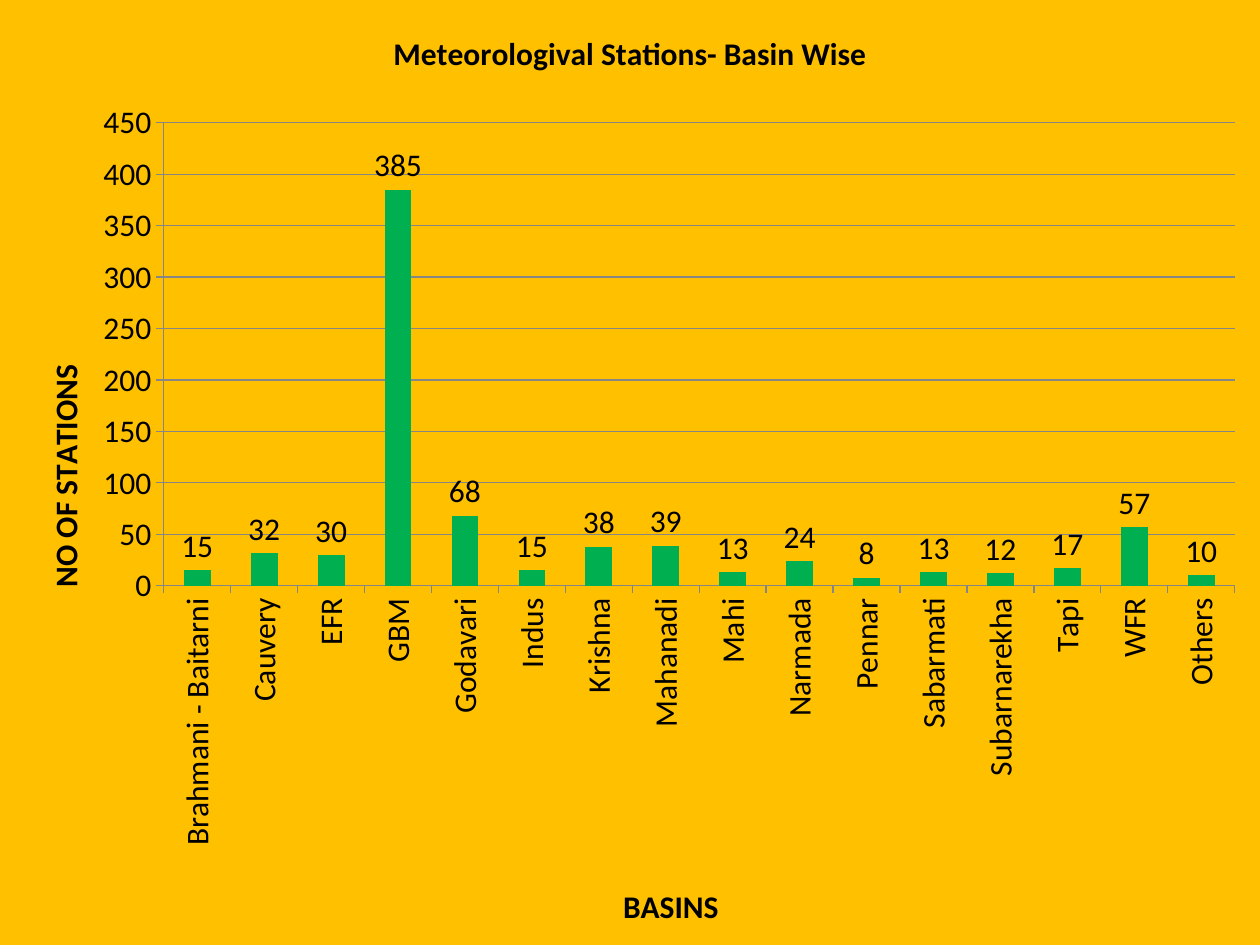
from pptx import Presentation
from pptx.chart.data import CategoryChartData
from pptx.dml.color import RGBColor
from pptx.enum.chart import XL_CHART_TYPE as ChartType, XL_LABEL_POSITION as LabelPosition
from pptx.enum.chart import XL_TICK_MARK as TickMark
from pptx.oxml import parse_xml
from pptx.oxml.ns import nsdecls, qn
from pptx.util import Pt

AMBER = RGBColor(0xFF, 0xC0, 0x00)
GREEN = RGBColor(0x00, 0xB0, 0x50)
GREY = RGBColor(0x86, 0x86, 0x86)
BLACK = RGBColor(0x00, 0x00, 0x00)
UPWARD = "-5400000"

STATIONS = {
    "Brahmani - Baitarni": 15, "Cauvery": 32, "EFR": 30, "GBM": 385,
    "Godavari": 68, "Indus": 15, "Krishna": 38, "Mahanadi": 39,
    "Mahi": 13, "Narmada": 24, "Pennar": 8, "Sabarmati": 13,
    "Subarnarekha": 12, "Tapi": 17, "WFR": 57, "Others": 10,
}


def style_font(font, size=18, bold=False, color=BLACK, face="Calibri"):
    font.size = Pt(size)
    font.bold = bold
    font.name = face
    font.color.rgb = color


def write_text(frame, text, **style):
    frame.text = text
    style_font(frame.paragraphs[0].runs[0].font, **style)


def manual_layout(inner=False, **fractions):
    target = '<c:layoutTarget val="inner"/>' if inner else ""
    modes = "".join(f'<c:{side}Mode val="edge"/>' for side in "xy")
    values = "".join(f'<c:{key} val="{value}"/>' for key, value in fractions.items())
    return parse_xml(f'<c:layout {nsdecls("c")}><c:manualLayout>'
                     f"{target}{modes}{values}</c:manualLayout></c:layout>")


def place(element, index, layout):
    for old in element.findall(qn("c:layout")):
        element.remove(old)
    element.insert(index, layout)


class ChartSlide:
    def __init__(self, deck):
        self.slide = deck.slides.add_slide(deck.slide_layouts[6])
        self.size = deck.slide_width, deck.slide_height

    def column_chart(self, name, counts):
        data = CategoryChartData(number_format="0")
        data.categories = list(counts)
        data.add_series(name, list(counts.values()))
        self.chart = self.slide.shapes.add_chart(
            ChartType.COLUMN_CLUSTERED, 0, 0, *self.size, data).chart
        style_font(self.chart.font, size=10)
        self.chart.has_legend = False
        columns = self.chart.plots[0]
        columns.gap_width = 150
        columns.vary_by_categories = False
        fill = columns.series[0].format.fill
        fill.solid()
        fill.fore_color.rgb = GREEN
        columns.has_data_labels = True
        labels = columns.data_labels
        labels.show_value = True
        labels.position = LabelPosition.OUTSIDE_END
        style_font(labels.font)

    def background(self, color):
        area = parse_xml(f'<c:spPr {nsdecls("c", "a")}><a:solidFill><a:srgbClr val="{color}"/>'
                         "</a:solidFill><a:ln><a:noFill/></a:ln></c:spPr>")
        self.chart.element.find(qn("c:chart")).addnext(area)

    def plot_area(self, **fractions):
        plot_area = self.chart.element.find(".//" + qn("c:plotArea"))
        place(plot_area, 0, manual_layout(inner=True, **fractions))

    def title(self, owner, text, **fractions):
        title = owner.chart_title if owner is self.chart else owner.axis_title
        write_text(title.text_frame, text, bold=True)
        if fractions:
            place(title._element, 1, manual_layout(**fractions))
        return title

    def axis(self, axis, text, **fractions):
        axis.major_tick_mark = TickMark.OUTSIDE
        axis.minor_tick_mark = TickMark.NONE
        style_font(axis.tick_labels.font)
        axis.format.line.color.rgb = GREY
        axis.format.line.width = Pt(0.75)
        return self.title(axis, text, **fractions)


def main():
    deck = Presentation()
    deck.slide_width, deck.slide_height = Pt(720), Pt(540)
    page = ChartSlide(deck)
    page.column_chart("Series 1", STATIONS)
    page.background(AMBER)
    page.plot_area(x=0.13, y=0.13, w=0.85, h=0.49)
    page.chart.has_title = True
    page.title(page.chart, "Meteorologival Stations- Basin Wise")
    page.chart.chart_title.include_in_layout = False

    basins = page.chart.category_axis
    page.axis(basins, "BASINS", x=0.49, y=0.93)
    basins.has_major_gridlines = False
    basins._element.find(qn("c:txPr")).find(qn("a:bodyPr")).set("rot", UPWARD)

    counts = page.chart.value_axis
    heading = page.axis(counts, "NO OF STATIONS", x=0.03, y=0.38)
    heading.text_frame._txBody.find(qn("a:bodyPr")).set("rot", UPWARD)
    counts.minimum_scale, counts.maximum_scale, counts.major_unit = 0, 450, 50
    counts.has_major_gridlines = True
    counts.major_gridlines.format.line.color.rgb = GREY
    counts.major_gridlines.format.line.width = Pt(0.75)
    deck.save("out.pptx")


if __name__ == "__main__":
    main()
